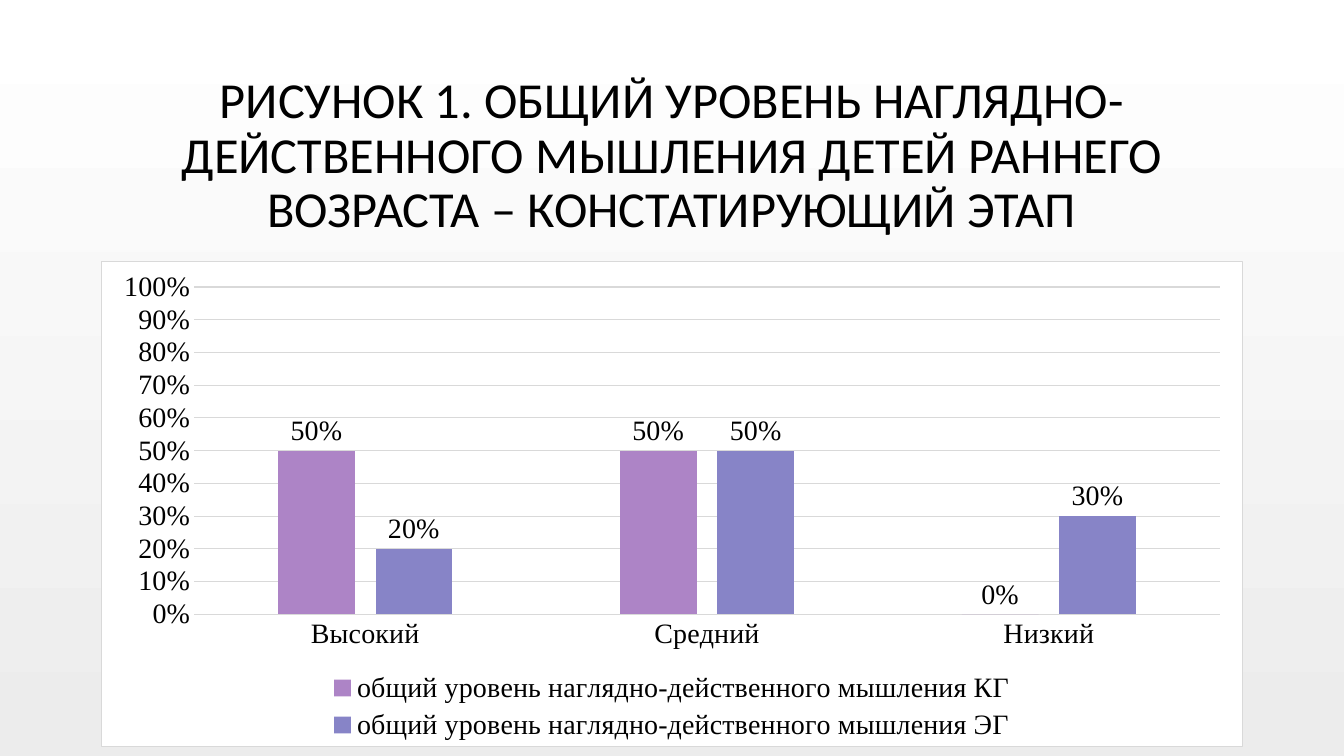
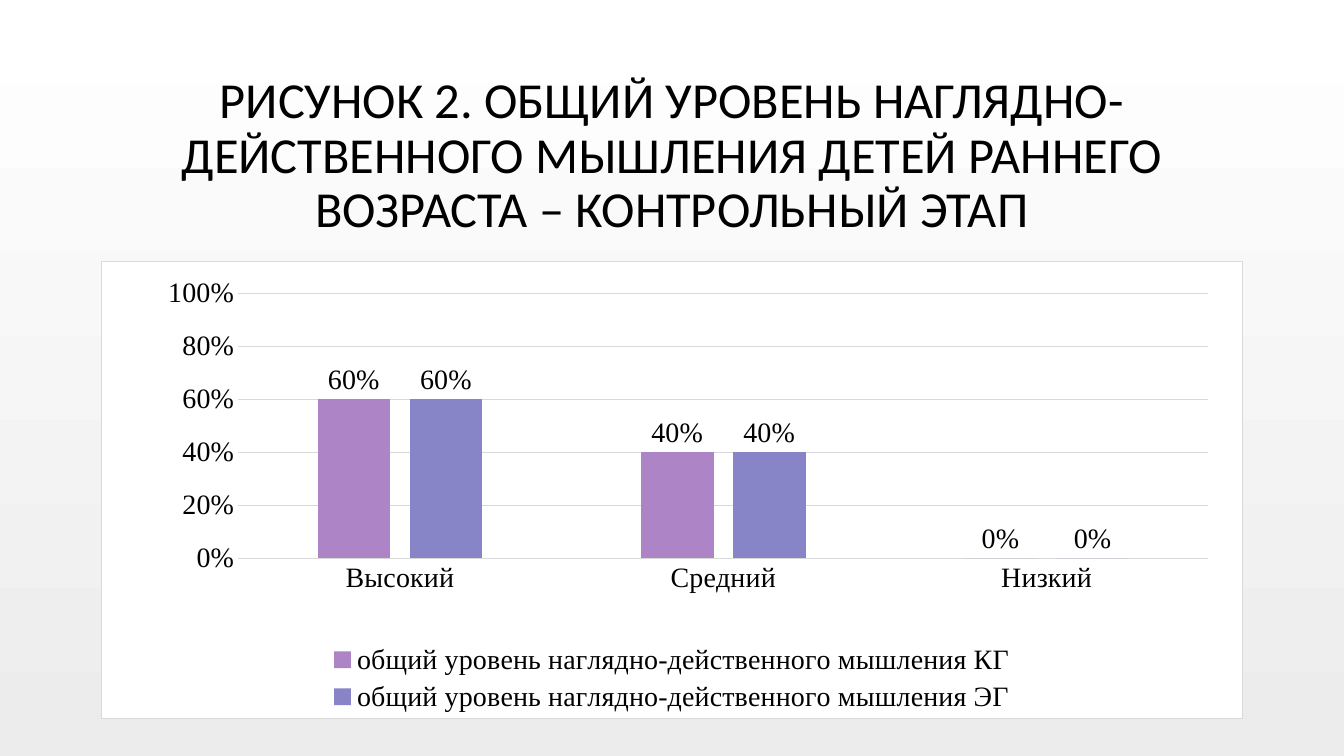
from dataclasses import dataclass
from typing import Optional

from lxml import etree
from pptx import Presentation
from pptx.chart.chart import Chart
from pptx.chart.data import CategoryChartData
from pptx.dml.color import RGBColor
from pptx.enum.chart import (
    XL_CHART_TYPE, XL_LABEL_POSITION, XL_LEGEND_POSITION, XL_TICK_MARK)
from pptx.enum.text import MSO_ANCHOR, PP_ALIGN
from pptx.oxml import parse_xml
from pptx.oxml.ns import nsdecls, qn
from pptx.slide import Slide
from pptx.util import Inches, Pt

COLUMNS = XL_CHART_TYPE.COLUMN_CLUSTERED
OUTSIDE_END = XL_LABEL_POSITION.OUTSIDE_END
BOTTOM = XL_LEGEND_POSITION.BOTTOM
NO_TICK = XL_TICK_MARK.NONE
MIDDLE = MSO_ANCHOR.MIDDLE
CENTER = PP_ALIGN.CENTER


@dataclass(frozen=True)
class Theme:
    top: str = "FFFFFF"
    bottom: str = "ECECEC"
    text: str = "000000"
    panel: str = "FFFFFF"
    rule: str = "D9D9D9"
    series: tuple[str, ...] = ("AD84C6", "8784C7")
    title_font: str = "Calibri"
    chart_font: str = "Times New Roman"
    title_size: float = 36
    chart_size: float = 20
    rule_width: float = 0.75


@dataclass(frozen=True)
class PlotFrame:
    """Inner plot area as fractions of the chart."""
    x: float
    y: float
    w: float
    h: float


@dataclass(frozen=True)
class Figure:
    title: str
    control: tuple[float, ...]
    experimental: tuple[float, ...]
    height: float
    step: float
    plot: Optional[PlotFrame] = None


THEME = Theme()
LEFT, WIDTH = 1, 11.33
PERCENT = "0%"
LEVELS = ("Высокий", "Средний", "Низкий")
MEASURE = "общий уровень наглядно-действенного мышления"
SUBJECT = ("ОБЩИЙ УРОВЕНЬ НАГЛЯДНО-ДЕЙСТВЕННОГО МЫШЛЕНИЯ "
           "ДЕТЕЙ РАННЕГО ВОЗРАСТА")

FIGURES = (
    Figure(f"РИСУНОК 1. {SUBJECT} – КОНСТАТИРУЮЩИЙ ЭТАП",
           (0.5, 0.5, 0), (0.2, 0.5, 0.3), height=4.82, step=0.1),
    Figure(f"РИСУНОК 2. {SUBJECT} – КОНТРОЛЬНЫЙ ЭТАП",
           (0.6, 0.4, 0), (0.6, 0.4, 0), height=4.54, step=0.2,
           plot=PlotFrame(0.12, 0.07, 0.85, 0.58)),
)


def color(value: str) -> RGBColor:
    return RGBColor.from_string(value)


def paint_background(page: Slide) -> None:
    fill = page.background.fill
    fill.gradient()
    fill.gradient_angle = 270
    for stop, shade in zip(fill.gradient_stops, (THEME.top, THEME.bottom)):
        stop.color.rgb = color(shade)


def add_title(page: Slide, text: str) -> None:
    box = page.shapes.add_textbox(
        Inches(LEFT), Inches(0.68), Inches(WIDTH), Inches(1.75))
    frame = box.text_frame
    frame.word_wrap = True
    frame.vertical_anchor = MIDDLE
    para = frame.paragraphs[0]
    para.alignment = CENTER
    para.line_spacing = 0.9
    span = para.add_run()
    span.text = text
    span.font.name = THEME.title_font
    span.font.size = Pt(THEME.title_size)
    span.font.color.rgb = color(THEME.text)


def frame_chart(chart: Chart) -> None:
    """White panel with a thin border behind the whole chart."""
    panel = parse_xml(
        f'<c:spPr {nsdecls("c", "a")}>'
        f'<a:solidFill><a:srgbClr val="{THEME.panel}"/></a:solidFill>'
        f'<a:ln w="{Pt(THEME.rule_width)}"><a:solidFill>'
        f'<a:srgbClr val="{THEME.rule}"/></a:solidFill></a:ln></c:spPr>')
    chart.element.find(qn("c:chart")).addnext(panel)


def place_plot(chart: Chart, plot: PlotFrame) -> None:
    area = chart.element.find(qn("c:chart")).find(qn("c:plotArea"))
    for old in area.findall(qn("c:layout")):
        area.remove(old)
    layout = parse_xml(f'<c:layout {nsdecls("c")}/>')
    manual = etree.SubElement(layout, qn("c:manualLayout"))
    settings = (("layoutTarget", "inner"), ("xMode", "edge"),
                ("yMode", "edge"), ("x", plot.x), ("y", plot.y),
                ("w", plot.w), ("h", plot.h))
    for tag, value in settings:
        etree.SubElement(manual, qn(f"c:{tag}")).set("val", str(value))
    area.insert(0, layout)


def style_axes(chart: Chart, step: float) -> None:
    categories, values = chart.category_axis, chart.value_axis
    for axis in (categories, values):
        axis.major_tick_mark = axis.minor_tick_mark = NO_TICK
    values.minimum_scale, values.maximum_scale = 0, 1
    values.major_unit = step
    values.has_major_gridlines = True
    values.format.line.fill.background()
    values.tick_labels.number_format = PERCENT
    values.tick_labels.number_format_is_linked = False
    for line in (categories.format.line, values.major_gridlines.format.line):
        line.color.rgb = color(THEME.rule)
        line.width = Pt(THEME.rule_width)


def style_columns(chart: Chart) -> None:
    plot = chart.plots[0]
    plot.gap_width, plot.overlap = 219, -27
    plot.vary_by_categories = False
    for series, shade in zip(plot.series, THEME.series):
        series.format.fill.solid()
        series.format.fill.fore_color.rgb = color(shade)
        labels = series.data_labels
        labels.show_value = True
        labels.number_format = PERCENT
        labels.number_format_is_linked = False
        labels.position = OUTSIDE_END


def add_level_chart(page: Slide, figure: Figure) -> None:
    data = CategoryChartData(number_format=PERCENT)
    data.categories = LEVELS
    data.add_series(f"{MEASURE} КГ", figure.control)
    data.add_series(f"{MEASURE} ЭГ", figure.experimental)
    chart = page.shapes.add_chart(
        COLUMNS, Inches(LEFT), Inches(2.59), Inches(WIDTH),
        Inches(figure.height), data).chart
    chart.has_title = False
    chart.font.name = THEME.chart_font
    chart.font.size = Pt(THEME.chart_size)
    chart.font.color.rgb = color(THEME.text)
    chart.has_legend = True
    chart.legend.position = BOTTOM
    chart.legend.include_in_layout = False
    style_axes(chart, figure.step)
    style_columns(chart)
    frame_chart(chart)
    if figure.plot:
        place_plot(chart, figure.plot)


def main() -> None:
    deck = Presentation()
    deck.slide_width, deck.slide_height = Inches(13.33), Inches(7.5)
    blank = deck.slide_layouts[6]
    for figure in FIGURES:
        page = deck.slides.add_slide(blank)
        paint_background(page)
        add_title(page, figure.title)
        add_level_chart(page, figure)
    deck.save("out.pptx")


if __name__ == "__main__":
    main()
